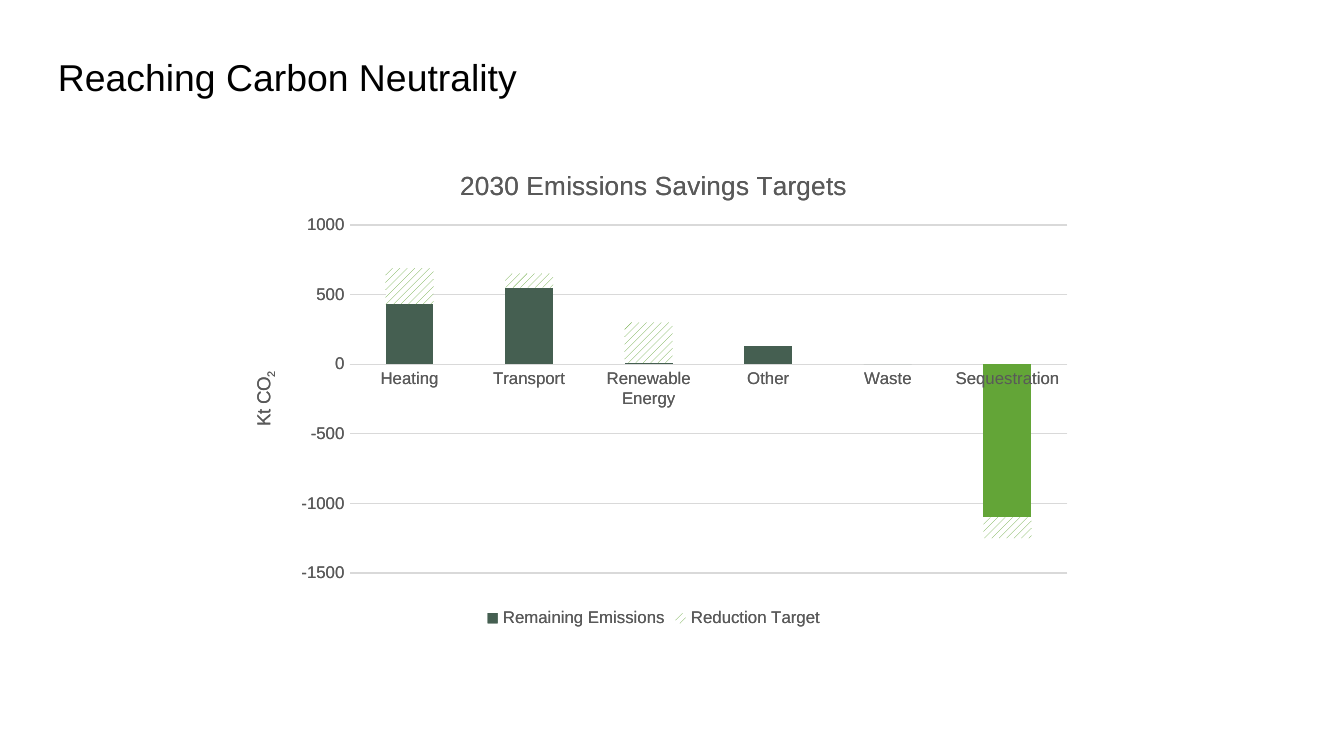
from dataclasses import dataclass

from lxml import etree
from pptx import Presentation
from pptx.chart.chart import Chart
from pptx.chart.data import CategoryChartData
from pptx.dml.color import RGBColor
from pptx.dml.fill import FillFormat
from pptx.enum.chart import XL_CHART_TYPE, XL_LEGEND_POSITION, XL_TICK_MARK
from pptx.enum.dml import MSO_PATTERN
from pptx.oxml.ns import qn
from pptx.text.text import Font
from pptx.util import Inches, Pt

STACKED = XL_CHART_TYPE.COLUMN_STACKED
BOTTOM = XL_LEGEND_POSITION.BOTTOM
NO_TICK = XL_TICK_MARK.NONE
HATCH = MSO_PATTERN.WIDE_UPWARD_DIAGONAL

FONT = "Arial"
BLACK, WHITE, GREY, GRID = "000000", "FFFFFF", "595959", "D9D9D9"
DARK_GREEN, GREEN = "455F51", "63A537"
SLIDE_WIDTH = Inches(10)
SLIDE_HEIGHT = SLIDE_WIDTH * 9 // 16
CHART_LAYERS = 2  # two stacked charts give the labels their heavier weight


@dataclass(frozen=True)
class Area:
    """A rectangle in shares of its container."""
    left: float
    top: float
    width: float
    height: float

    def on_slide(self) -> tuple[int, int, int, int]:
        return (int(self.left * SLIDE_WIDTH), int(self.top * SLIDE_HEIGHT),
                int(self.width * SLIDE_WIDTH), int(self.height * SLIDE_HEIGHT))


@dataclass(frozen=True)
class EmissionSeries:
    name: str
    values: tuple[int, ...]
    color: str
    hatched: bool = False


TITLE_AREA = Area(0.034, 0.056, 0.798, 0.112)
CHART_AREA = Area(0.166, 0.194, 0.641, 0.644)
PLOT_AREA = Area(0.147, 0.161, 0.833, 0.715)

CATEGORIES = ("Heating", "Transport", "Renewable Energy", "Other", "Waste",
              "Sequestration")
SERIES = (
    EmissionSeries("Remaining Emissions", (430, 550, 10, 130, 0, -1100), DARK_GREEN),
    EmissionSeries("Reduction Target", (260, 100, 290, 0, 0, -150), GREEN, hatched=True),
)


def rgb(color: str) -> RGBColor:
    return RGBColor.from_string(color)


def format_font(font: Font, size: float, color: str) -> None:
    font.name, font.size, font.bold = FONT, Pt(size), False
    font.color.rgb = rgb(color)


def add_text(paragraph, text: str, *, size: float, color: str,
             subscript: bool = False) -> None:
    run = paragraph.add_run()
    run.text = text
    format_font(run.font, size, color)
    if subscript:
        run._r.get_or_add_rPr().set("baseline", "-25000")


def paint(fill: FillFormat, color: str, hatched: bool = False) -> None:
    if hatched:
        fill.patterned()
        fill.pattern = HATCH
        fill.back_color.rgb = rgb(WHITE)
    else:
        fill.solid()
    fill.fore_color.rgb = rgb(color)


def place_plot(chart: Chart, area: Area) -> None:
    """Fix the inner plot area, which python-pptx has no method for."""
    plot_area = chart._chartSpace.chart.plotArea
    for old_layout in plot_area.findall(qn("c:layout")):
        plot_area.remove(old_layout)
    layout = etree.Element(qn("c:layout"))
    plot_area.insert(0, layout)
    manual = etree.SubElement(layout, qn("c:manualLayout"))
    settings = {"layoutTarget": "inner", "xMode": "edge", "yMode": "edge",
                "x": area.left, "y": area.top, "w": area.width, "h": area.height}
    for name, value in settings.items():
        etree.SubElement(manual, qn(f"c:{name}")).set("val", str(value))


def format_axes(chart: Chart) -> None:
    categories, values = chart.category_axis, chart.value_axis
    for axis in (categories, values):
        axis.major_tick_mark = axis.minor_tick_mark = NO_TICK
        format_font(axis.tick_labels.font, 9, GREY)
    values.minimum_scale, values.maximum_scale, values.major_unit = -1500, 1000, 500
    values.format.line.fill.background()
    values.has_major_gridlines = True
    for line in (categories.format.line, values.major_gridlines.format.line):
        line.color.rgb = rgb(GRID)
        line.width = Pt(0.75)

    frame = values.axis_title.text_frame
    frame._txBody.find(qn("a:bodyPr")).set("rot", "-5400000")
    paragraph = frame.paragraphs[0]
    add_text(paragraph, "Kt CO", size=10, color=GREY)
    add_text(paragraph, "2", size=10, color=GREY, subscript=True)


def add_emissions_chart(slide) -> None:
    data = CategoryChartData()
    data.categories = CATEGORIES
    for series in SERIES:
        data.add_series(series.name, series.values)
    chart = slide.shapes.add_chart(STACKED, *CHART_AREA.on_slide(), data).chart
    format_font(chart.font, 10, BLACK)
    add_text(chart.chart_title.text_frame.paragraphs[0],
             "2030 Emissions Savings Targets", size=14, color=GREY)

    plot = chart.plots[0]
    plot.gap_width, plot.overlap, plot.vary_by_categories = 150, 100, False
    for bars, series in zip(plot.series, SERIES):
        bars.invert_if_negative = False
        paint(bars.format.fill, series.color, series.hatched)
    sequestration = plot.series[0].points[CATEGORIES.index("Sequestration")]
    paint(sequestration.format.fill, GREEN)

    format_axes(chart)
    chart.has_legend = True
    chart.legend.position = BOTTOM
    chart.legend.include_in_layout = False
    format_font(chart.legend.font, 9, GREY)
    place_plot(chart, PLOT_AREA)


def add_title(slide) -> None:
    frame = slide.shapes.add_textbox(*TITLE_AREA.on_slide()).text_frame
    frame.word_wrap = True
    frame.margin_left = frame.margin_right = Inches(0.09)
    frame.margin_top = frame.margin_bottom = Inches(0.09)
    add_text(frame.paragraphs[0], "Reaching Carbon Neutrality", size=20, color=BLACK)


def main() -> None:
    presentation = Presentation()
    presentation.slide_width, presentation.slide_height = SLIDE_WIDTH, SLIDE_HEIGHT
    slide = presentation.slides.add_slide(presentation.slide_layouts[6])
    add_title(slide)
    for _ in range(CHART_LAYERS):
        add_emissions_chart(slide)
    presentation.save("out.pptx")


if __name__ == "__main__":
    main()
